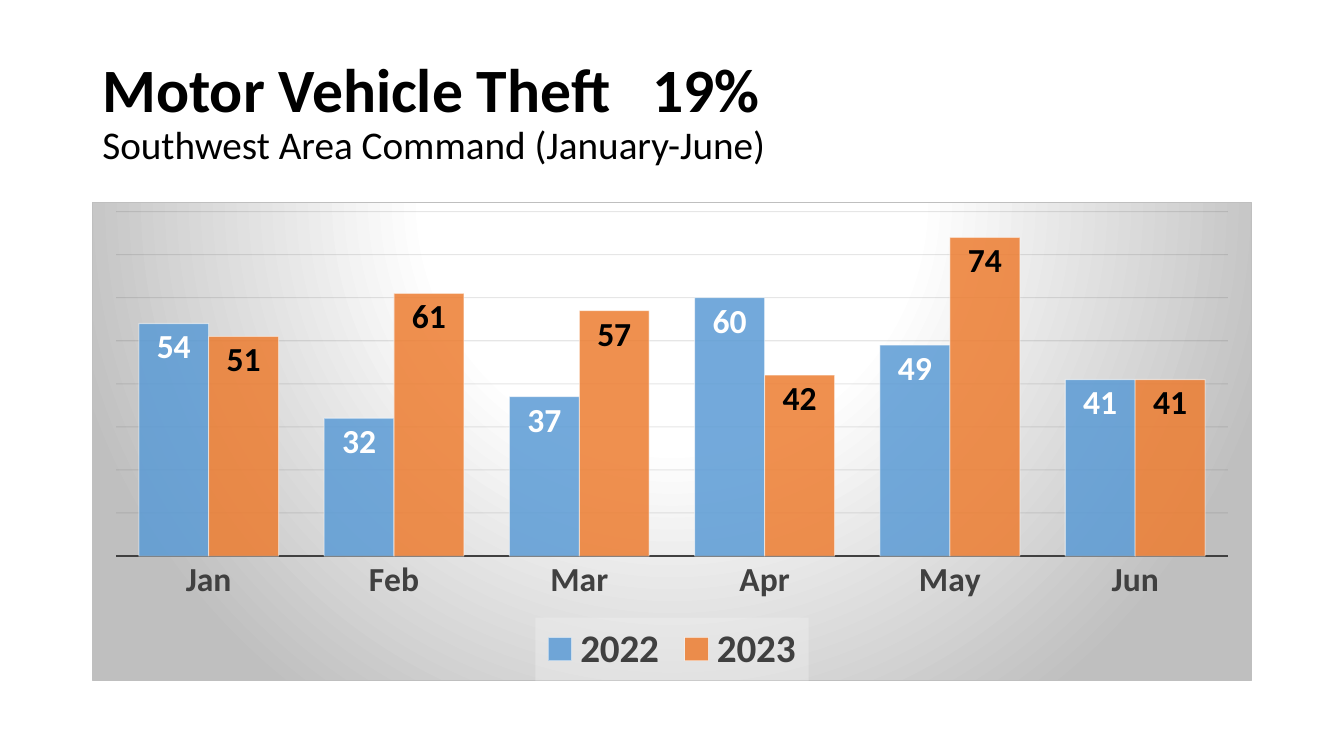
from lxml import etree
from pptx import Presentation
from pptx.chart.data import CategoryChartData
from pptx.dml.color import RGBColor
from pptx.enum.chart import XL_CHART_TYPE, XL_LABEL_POSITION, XL_LEGEND_POSITION, XL_TICK_LABEL_POSITION, XL_TICK_MARK
from pptx.enum.text import MSO_ANCHOR
from pptx.oxml import parse_xml
from pptx.oxml.ns import nsdecls, qn
from pptx.util import Pt

COLUMNS = XL_CHART_TYPE.COLUMN_CLUSTERED
INSIDE_END = XL_LABEL_POSITION.INSIDE_END
BOTTOM = XL_LEGEND_POSITION.BOTTOM
NO_TICK = XL_TICK_MARK.NONE
NO_LABELS = XL_TICK_LABEL_POSITION.NONE
MIDDLE = MSO_ANCHOR.MIDDLE

FONT = "Calibri"
BLACK = RGBColor(0x00, 0x00, 0x00)
WHITE = RGBColor(0xFF, 0xFF, 0xFF)
DARK = RGBColor(0x40, 0x40, 0x40)
GRID = RGBColor(0x0D, 0x0D, 0x0D)
SILVER = RGBColor(0xBF, 0xBF, 0xBF)
PALE = RGBColor(0xF2, 0xF2, 0xF2)
BLUE = RGBColor(0x5B, 0x9B, 0xD5)
ORANGE = RGBColor(0xED, 0x7D, 0x31)

MONTHS = ["Jan", "Feb", "Mar", "Apr", "May", "Jun"]
THEFTS = {
    "2022": ([54, 32, 37, 60, 49, 41], BLUE, WHITE),
    "2023": ([51, 61, 57, 42, 74, 41], ORANGE, BLACK),
}


def set_font(font, size, color, bold=True):
    """Apply the common font settings."""
    for name, value in {"name": FONT, "size": Pt(size), "bold": bold}.items():
        setattr(font, name, value)
    font.color.rgb = color


def set_line(line, color, width):
    """Give a line its colour and width in points."""
    line.color.rgb = color
    line.width = Pt(width)


def set_alpha(element, *percents):
    """Set the opacity of the element's colours in document order."""
    for clr, percent in zip(element.iter(qn("a:srgbClr")), percents):
        etree.SubElement(clr, qn("a:alpha"), val=str(percent * 1000))


def add_title(s, left, top, width, height):
    """Add the heading with its percentage and subtitle."""
    tf = s.shapes.add_textbox(Pt(left), Pt(top), Pt(width), Pt(height)).text_frame
    tf.word_wrap = True
    tf.vertical_anchor = MIDDLE
    p = tf.paragraphs[0]
    p.line_spacing = 0.9
    tabs = etree.SubElement(p._p.get_or_add_pPr(), qn("a:tabLst"))
    etree.SubElement(tabs, qn("a:tab"), pos=str(Pt(393)), algn="l")
    r = p.add_run()
    r.text = "Motor Vehicle Theft\t19%"
    set_font(r.font, 44, BLACK)
    p.add_line_break()
    r = p.add_run()
    r.text = "Southwest Area Command (January-June)"
    set_font(r.font, 28, BLACK, False)


def add_backdrop(chart):
    """Give the chart area its radial gradient and border."""
    stops = "".join(
        f'<a:gs pos="{pos * 1000}"><a:srgbClr val="{color}"/></a:gs>'
        for pos, color in [(0, WHITE), (39, WHITE), (100, SILVER)])
    chart._chartSpace.find(qn("c:chart")).addnext(parse_xml(
        f'<c:spPr {nsdecls("c", "a")}><a:gradFill><a:gsLst>{stops}</a:gsLst>'
        '<a:path path="circle"><a:fillToRect l="50000" t="-80000" r="50000" b="180000"/></a:path>'
        f'</a:gradFill><a:ln w="{Pt(0.75)}"><a:solidFill><a:srgbClr val="{SILVER}"/>'
        '</a:solidFill></a:ln></c:spPr>'))


def add_legend(chart):
    """Add the bottom legend on a pale translucent panel."""
    chart.has_legend = True
    legend = chart.legend
    legend.position = BOTTOM
    legend.include_in_layout = False
    set_font(legend.font, 28, DARK)
    panel = parse_xml(
        f'<c:spPr {nsdecls("c", "a")}><a:solidFill><a:srgbClr val="{PALE}"/></a:solidFill></c:spPr>')
    set_alpha(panel, 39)
    legend._element.find(qn("c:overlay")).addnext(panel)


def style_axes(chart):
    """Style the month axis and leave only gridlines of the value axis."""
    months, counts = chart.category_axis, chart.value_axis
    months.major_tick_mark = NO_TICK
    set_font(months.tick_labels.font, 24, DARK)
    set_line(months.format.line, DARK, 1.5)
    settings = {"minimum_scale": 0, "maximum_scale": 80, "major_unit": 10,
                "tick_label_position": NO_LABELS, "visible": False,
                "has_major_gridlines": True}
    for name, value in settings.items():
        setattr(counts, name, value)
    set_line(counts.major_gridlines.format.line, GRID, 0.75)
    set_alpha(counts._element.find(qn("c:majorGridlines")), 10)


def add_theft_chart(s, left, top, width, height):
    """Add the monthly column chart comparing both years."""
    data = CategoryChartData()
    data.categories = MONTHS
    for year, (values, _, _) in THEFTS.items():
        data.add_series(year, values)
    chart = s.shapes.add_chart(COLUMNS, Pt(left), Pt(top), Pt(width), Pt(height), data).chart
    chart.has_title = False
    set_font(chart.font, 10, BLACK, False)
    add_backdrop(chart)
    add_legend(chart)
    style_axes(chart)
    plot = chart.plots[0]
    for name, value in {"gap_width": 65, "overlap": 0, "vary_by_categories": False}.items():
        setattr(plot, name, value)
    for series, (_, color, label_color) in zip(plot.series, THEFTS.values()):
        series.format.fill.solid()
        series.format.fill.fore_color.rgb = color
        set_line(series.format.line, WHITE, 0.75)
        set_alpha(series._element, 85, 50)
        labels = series.data_labels
        labels.show_value = True
        labels.position = INSIDE_END
        set_font(labels.font, 24, label_color)


def main():
    """Build and save the slide."""
    prs = Presentation()
    prs.slide_width, prs.slide_height = Pt(960), Pt(540)
    s = prs.slides.add_slide(prs.slide_layouts[6])
    add_title(s, 66, 28.75, 828, 104.4)
    add_theft_chart(s, 66, 144, 828, 342.5)
    prs.save("out.pptx")


if __name__ == "__main__":
    main()
